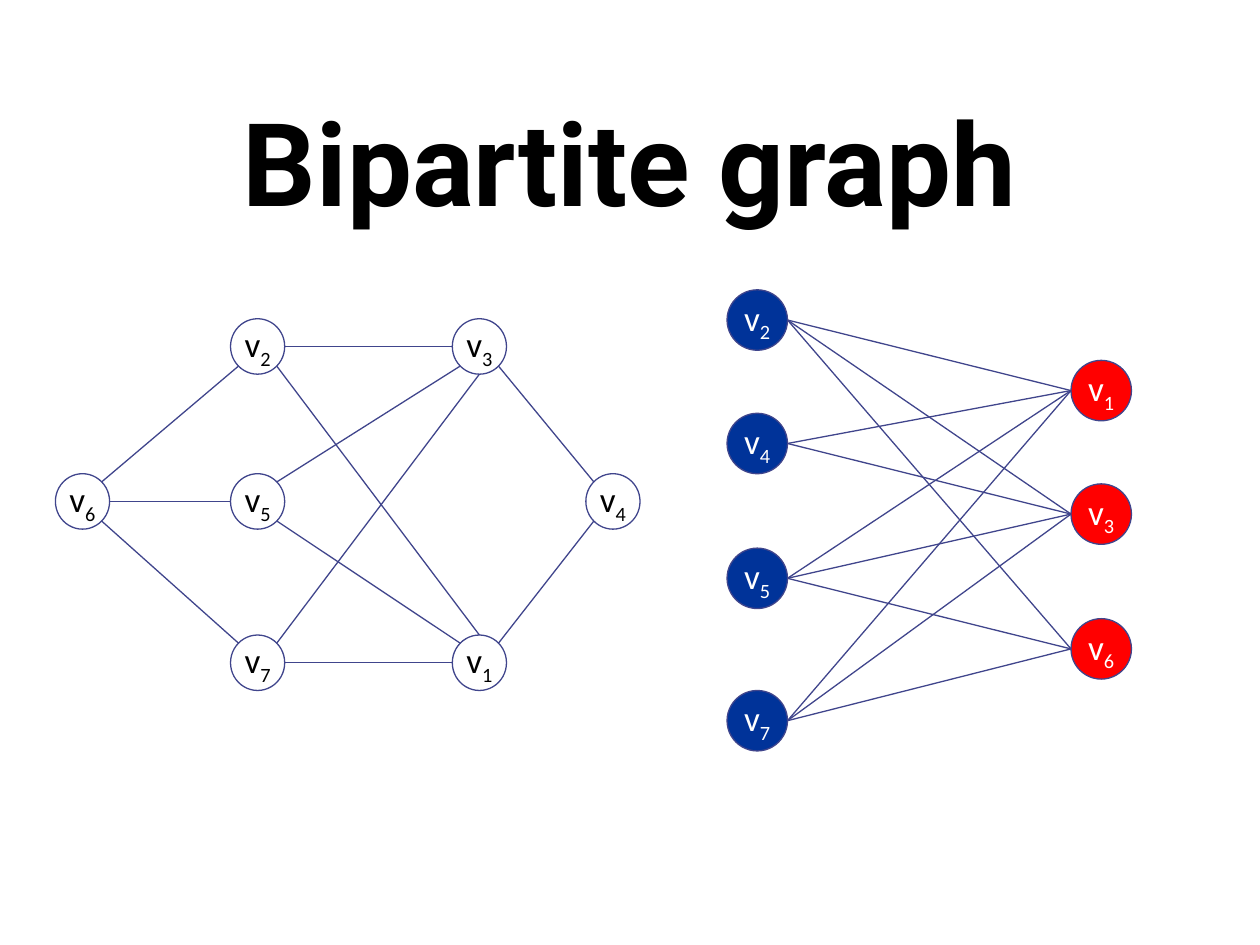
import pptx
import pptx.util
import pptx.dml.color
import pptx.enum.shapes
import pptx.enum.text
import lxml.etree
from pptx.util import Inches

COLORS = {"line": "40458C", "blue": "003399", "red": "FF0000",
          "black": "000000", "white": "FFFFFF"}
# Points on a circle, as fractions of its box
SITES = {"t": (0.5, 0), "b": (0.5, 1), "l": (0, 0.5), "r": (1, 0.5),
         "tl": (0.15, 0.15), "tr": (0.85, 0.15),
         "bl": (0.15, 0.85), "br": (0.85, 0.85)}


def color(name):
    return pptx.dml.color.RGBColor.from_string(COLORS[name])


def draw_graph(shapes, nodes, edges, wide, high):
    """Draw nodes {number: (left, top, fill, ink)} and edges (node, site, node, site)."""
    group = shapes.add_group_shape().shapes
    for num, (left, top, fill, ink) in nodes.items():
        node = group.add_shape(pptx.enum.shapes.MSO_SHAPE.OVAL, Inches(left),
                               Inches(top), Inches(wide), Inches(high))
        node.shadow.inherit = False
        if fill:
            node.fill.solid()
            node.fill.fore_color.rgb = color(fill)
        else:
            node.fill.background()
        node.line.color.rgb = color("line")
        node.line.width = pptx.util.Pt(0.75)
        frame = node.text_frame
        frame.word_wrap = False
        frame.vertical_anchor = pptx.enum.text.MSO_ANCHOR.MIDDLE
        para = frame.paragraphs[0]
        para.alignment = pptx.enum.text.PP_ALIGN.CENTER
        for text in ("v", str(num)):
            run = para.add_run()
            run.text = text
            run.font.size = pptx.util.Pt(20)
            run.font.name = "Calibri"
            run.font.color.rgb = color(ink)
        run._r.get_or_add_rPr().set("baseline", "-25000")

    for start, out, end, into in edges:
        ends = []
        for num, site in ((start, out), (end, into)):
            left, top = nodes[num][:2]
            across, down = SITES[site]
            ends += [Inches(left + across * wide), Inches(top + down * high)]
        edge = group.add_connector(pptx.enum.shapes.MSO_CONNECTOR.STRAIGHT, *ends)
        edge.line.color.rgb = color("line")
        edge.line.width = pptx.util.Pt(0.75)
        lxml.etree.SubElement(edge._element.spPr, pptx.oxml.ns.qn("a:effectLst"))


deck = pptx.Presentation()
deck.slide_width, deck.slide_height = Inches(10), Inches(7.5)
slide = deck.slides.add_slide(deck.slide_layouts[5])

title = slide.shapes.title
title.left, title.top = Inches(0.5), Inches(0.65)
title.width, title.height = Inches(9), Inches(1.25)
title.text_frame.text = "Bipartite graph"
title.text_frame.vertical_anchor = pptx.enum.text.MSO_ANCHOR.MIDDLE
head = title.text_frame.paragraphs[0]
head.alignment = pptx.enum.text.PP_ALIGN.CENTER
font = head.runs[0].font
font.name, font.size, font.bold = "Roboto", pptx.util.Pt(66), True
font.color.rgb = color("black")

# Left: the graph as given
spots = {1: (3.59, 5.04), 2: (1.83, 2.53), 3: (3.59, 2.53), 6: (0.44, 3.76),
         5: (1.83, 3.76), 4: (4.65, 3.76), 7: (1.83, 5.04)}
nodes = {num: (*spot, None, "black") for num, spot in spots.items()}
edges = [(2, "bl", 6, "tr"), (2, "r", 3, "l"), (3, "br", 4, "tl"),
         (1, "tr", 4, "bl"), (1, "tl", 5, "br"), (1, "l", 7, "r"),
         (6, "br", 7, "tl"), (5, "l", 6, "r"), (3, "bl", 5, "tr"),
         (3, "b", 7, "tr"), (1, "t", 2, "br")]
draw_graph(slide.shapes, nodes, edges, 0.43, 0.44)

# Right: the same graph split into two sets
blues = {2: 2.3, 4: 3.28, 5: 4.35, 7: 5.48}
reds = {1: 2.86, 3: 3.84, 6: 4.91}
nodes = {num: (5.77, top, "blue", "white") for num, top in blues.items()}
nodes.update({num: (8.5, top, "red", "white") for num, top in reds.items()})
edges = [(blue, "r", red, "l") for blue in blues for red in reds
         if (blue, red) != (4, 6)]
draw_graph(slide.shapes, nodes, edges, 0.48, 0.48)

deck.save("out.pptx")
